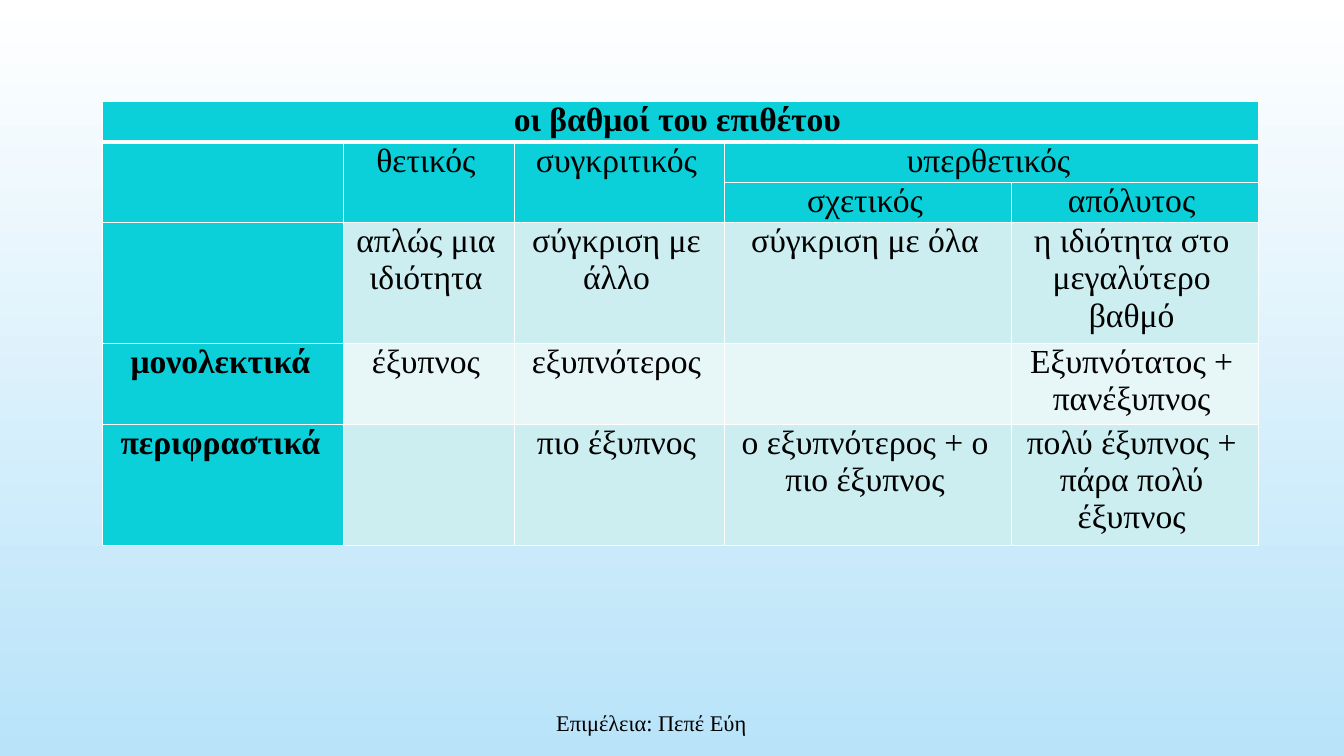
import pptx
import pptx.dml.color
import pptx.enum.text
import pptx.oxml
import pptx.oxml.ns
import pptx.util
from dataclasses import dataclass

Inches = pptx.util.Inches
Pt = pptx.util.Pt
CENTER = pptx.enum.text.PP_ALIGN.CENTER


@dataclass(frozen=True)
class Theme:
    font: str = "Times New Roman"
    text: str = "000000"
    header: str = "0BD0D9"
    band_dark: str = "CCEEF1"
    band_light: str = "E7F7F8"
    border: str = "FFFFFF"
    sky_top: str = "FFFFFF"
    sky_bottom: str = "B8E3F9"
    table_size: int = 24
    footer_size: int = 16


THEME = Theme()
HEADER_ROWS = 3
COLUMN_WIDTHS = [2.39, 1.69, 2.09, 2.84, 2.45]
# Rows grow to fit their text
ROW_HEIGHTS = [0, 0, 0, 0, 0, 1]
DEGREES = [
    ["οι βαθμοί του επιθέτου", "", "", "", ""],
    ["", "θετικός", "συγκριτικός", "υπερθετικός", ""],
    ["", "", "", "σχετικός", "απόλυτος"],
    ["", "απλώς μια ιδιότητα", "σύγκριση με άλλο", "σύγκριση με όλα",
     "η ιδιότητα στο μεγαλύτερο βαθμό"],
    ["μονολεκτικά", "έξυπνος", "εξυπνότερος", "", "Εξυπνότατος + πανέξυπνος"],
    ["περιφραστικά", "", "πιο έξυπνος", "ο εξυπνότερος + ο πιο έξυπνος",
     "πολύ έξυπνος + πάρα πολύ έξυπνος"],
]
# First and last (row, column) of each merged area
MERGES = [((0, 0), (0, 4)), ((1, 0), (2, 0)), ((1, 1), (2, 1)),
          ((1, 2), (2, 2)), ((1, 3), (1, 4))]


def rgb(value):
    return pptx.dml.color.RGBColor.from_string(value)


def write_centered(paragraph, text, size, bold=False):
    paragraph.text = text
    paragraph.alignment = CENTER
    font = paragraph.font
    font.name, font.size, font.bold = THEME.font, Pt(size), bold
    font.color.rgb = rgb(THEME.text)


def set_borders(cell, top, bottom):
    """Draw all four edges; top and bottom are widths in points."""
    properties = cell._tc.get_or_add_tcPr()
    for side, width in (("L", 1), ("R", 1), ("T", top), ("B", bottom)):
        properties.append(pptx.oxml.parse_xml(
            f'<a:ln{side} {pptx.oxml.ns.nsdecls("a")} w="{Pt(width)}"><a:solidFill>'
            f'<a:srgbClr val="{THEME.border}"/></a:solidFill></a:ln{side}>'))


def cell_color(row, column):
    if row < HEADER_ROWS or column == 0:
        return THEME.header
    return THEME.band_light if (row - HEADER_ROWS) % 2 else THEME.band_dark


def paint_background(page):
    fill = page.background.fill
    fill.gradient()
    fill.gradient_angle = 270
    for stop, position, color in zip(fill.gradient_stops, (0, 1),
                                     (THEME.sky_top, THEME.sky_bottom)):
        stop.position = position
        stop.color.rgb = rgb(color)


def add_degrees_table(page, left, top, height):
    frame = page.shapes.add_table(
        len(ROW_HEIGHTS), len(COLUMN_WIDTHS), Inches(left), Inches(top),
        Inches(sum(COLUMN_WIDTHS)), Inches(height))
    table = frame.table
    for column, width in zip(table.columns, COLUMN_WIDTHS):
        column.width = Inches(width)
    for row, row_height in zip(table.rows, ROW_HEIGHTS):
        row.height = Inches(row_height)
    frame.height = Inches(height)
    for row, texts in enumerate(DEGREES):
        for column, text in enumerate(texts):
            cell = table.cell(row, column)
            cell.margin_left, cell.margin_right = Inches(0.07), Inches(0.13)
            cell.margin_top = cell.margin_bottom = 0
            set_borders(cell, top=3 if row == 1 else 1, bottom=3 if row == 0 else 1)
            cell.fill.solid()
            cell.fill.fore_color.rgb = rgb(cell_color(row, column))
            write_centered(cell.text_frame.paragraphs[0], text, THEME.table_size,
                           bold=row == 0 or column == 0)
    for first, last in MERGES:
        table.cell(*first).merge(table.cell(*last))


def add_footer(page, left, top, width, height):
    box = page.shapes.add_textbox(Inches(left), Inches(top), Inches(width), Inches(height))
    frame = box.text_frame
    frame.word_wrap = True
    frame.vertical_anchor = pptx.enum.text.MSO_ANCHOR.MIDDLE
    write_centered(frame.paragraphs[0], "Επιμέλεια: Πεπέ Εύη", THEME.footer_size)


def main():
    deck = pptx.Presentation()
    deck.slide_width, deck.slide_height = Inches(13.33), Inches(7.5)
    page = deck.slides.add_slide(deck.slide_layouts[6])
    paint_background(page)
    add_footer(page, 2.81, 6.97, 7.3, 0.4)
    add_degrees_table(page, 1.02, 1.01, 4.4)
    deck.save("out.pptx")


if __name__ == "__main__":
    main()
